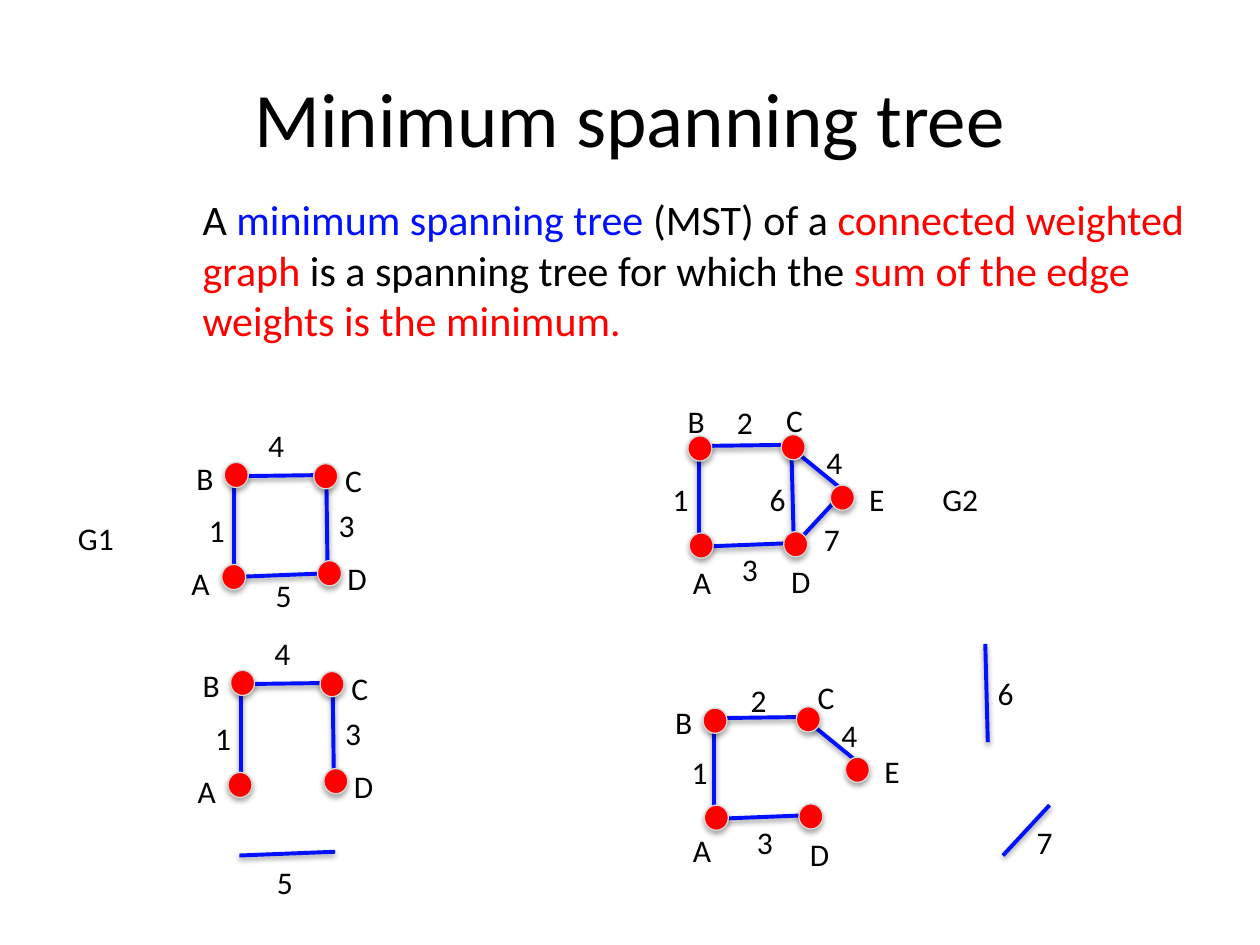
from dataclasses import dataclass, field

import pptx
import pptx.dml.color
import pptx.enum.shapes
import pptx.enum.text
import pptx.oxml
import pptx.oxml.ns
import pptx.util
from pptx.util import Inches

Point = tuple[float, float]


@dataclass(frozen=True)
class Theme:
    font: str = "Calibri"
    text: str = "000000"
    blue: str = "0110FF"
    red: str = "FF0000"
    outline: str = "D8D8D8"
    title_size: int = 44
    body_size: int = 24
    label_size: int = 18
    edge_width: float = 2.25
    outline_width: float = 0.75


@dataclass(frozen=True)
class Node:
    name: str
    corner: Point
    label: Point


@dataclass(frozen=True)
class Edge:
    weight: str
    start: Point
    end: Point
    label: Point


@dataclass(frozen=True)
class Graph:
    nodes: list[Node]
    edges: list[Edge]


@dataclass(frozen=True)
class Placement:
    """Shift of a whole graph, with exceptions for single edges and labels."""
    shift: Point = (0, 0)
    edges: dict[str, Point] = field(default_factory=dict)
    labels: dict[str, Point] = field(default_factory=dict)


THEME = Theme()
NODE_SIZE = (0.19, 0.2)
LABEL_SIZE = (0.34, 0.4)
NAME_SIZE = (0.49, 0.4)

G1 = Graph(
    nodes=[
        Node("A", (1.76, 4.48), (1.42, 4.43)),
        Node("B", (1.78, 3.67), (1.46, 3.59)),
        Node("C", (2.49, 3.68), (2.64, 3.61)),
        Node("D", (2.52, 4.45), (2.66, 4.39)),
    ],
    edges=[
        Edge("4", (2.6, 3.77), (1.84, 3.78), (2.03, 3.33)),
        Edge("1", (1.86, 3.77), (1.86, 4.55), (1.56, 4.01)),
        Edge("3", (2.59, 3.77), (2.6, 4.55), (2.59, 3.97)),
        Edge("5", (2.6, 4.55), (1.84, 4.58), (2.09, 4.52)),
    ],
)
G2 = Graph(
    nodes=[
        Node("A", (5.47, 4.23), (5.4, 4.42)),
        Node("B", (5.46, 3.46), (5.36, 3.14)),
        Node("C", (6.2, 3.45), (6.14, 3.13)),
        Node("D", (6.22, 4.22), (6.18, 4.41)),
        Node("E", (6.59, 3.85), (6.8, 3.76)),
    ],
    edges=[
        Edge("7", (6.69, 3.91), (6.32, 4.31), (6.44, 4.08)),
        Edge("4", (6.26, 3.54), (6.69, 3.89), (6.46, 3.47)),
        Edge("2", (6.3, 3.53), (5.53, 3.54), (5.75, 3.15)),
        Edge("1", (5.55, 3.53), (5.55, 4.31), (5.24, 3.76)),
        Edge("6", (6.28, 3.53), (6.3, 4.31), (6.01, 3.76)),
        Edge("3", (6.3, 4.31), (5.53, 4.34), (5.79, 4.32)),
    ],
)
# The edges left out of each tree are set apart from it.
G1_TREE = Placement((0.05, 1.65), edges={"5": (0.06, 2.21)},
                    labels={"5": (0.01, 2.28)})
G2_TREE = Placement(
    (0.12, 2.16),
    edges={"6": (1.54, 1.58), "7": (1.64, 2.48)},
    labels={"A": (0, 2.13), "B": (-0.1, 2.39), "C": (0.25, 2.2),
            "D": (0.15, 2.17), "1": (0.15, 2.17), "2": (0.11, 2.21),
            "6": (1.81, 1.54), "7": (1.69, 2.4)},
)


def color(value: str):
    return pptx.dml.color.RGBColor.from_string(value)


def moved(point: Point, shift: Point) -> Point:
    return point[0] + shift[0], point[1] + shift[1]


def add_run(paragraph, text: str, *, size: float, fill: str = THEME.text) -> None:
    run = paragraph.add_run()
    run.text = text
    run.font.name = THEME.font
    run.font.size = pptx.util.Pt(size)
    run.font.color.rgb = color(fill)


def add_text_box(slide, corner: Point, size: Point, runs: list[tuple[str, str]],
                 *, font_size: float, wrap: bool = False) -> None:
    """Add one paragraph made of (text, colour) runs."""
    shape = slide.shapes.add_textbox(*map(Inches, corner + size))
    frame = shape.text_frame
    frame.word_wrap = wrap
    frame.auto_size = pptx.enum.text.MSO_AUTO_SIZE.SHAPE_TO_FIT_TEXT
    for text, fill in runs:
        add_run(frame.paragraphs[0], text, size=font_size, fill=fill)


def add_label(slide, text: str, corner: Point, size: Point = LABEL_SIZE) -> None:
    add_text_box(slide, corner, size, [(text, THEME.text)], font_size=THEME.label_size)


def add_shadow(shape, *, distance: int, opacity: int) -> None:
    """Append a downward shadow; call it after the line is set."""
    shape._element.spPr.append(pptx.oxml.parse_xml(
        f'<a:effectLst {pptx.oxml.ns.nsdecls("a")}>'
        f'<a:outerShdw blurRad="40000" dist="{distance}" dir="5400000" rotWithShape="0">'
        f'<a:srgbClr val="000000"><a:alpha val="{opacity * 1000}"/></a:srgbClr>'
        '</a:outerShdw></a:effectLst>'))


def add_edge(slide, start: Point, end: Point) -> None:
    connector = slide.shapes.add_connector(
        pptx.enum.shapes.MSO_CONNECTOR.STRAIGHT, *map(Inches, start + end))
    connector.line.color.rgb = color(THEME.blue)
    connector.line.width = pptx.util.Pt(THEME.edge_width)
    add_shadow(connector, distance=20000, opacity=38)


def add_node(slide, corner: Point) -> None:
    shape = slide.shapes.add_shape(
        pptx.enum.shapes.MSO_SHAPE.OVAL, *map(Inches, corner + NODE_SIZE))
    shape.fill.solid()
    shape.fill.fore_color.rgb = color(THEME.red)
    shape.line.color.rgb = color(THEME.outline)
    shape.line.width = pptx.util.Pt(THEME.outline_width)
    add_shadow(shape, distance=23000, opacity=35)


def draw_graph(slide, graph: Graph, placement: Placement) -> None:
    for edge in graph.edges:
        shift = placement.edges.get(edge.weight, placement.shift)
        add_edge(slide, moved(edge.start, shift), moved(edge.end, shift))
    for node in graph.nodes:
        add_node(slide, moved(node.corner, placement.shift))
    labels = [(node.name, node.label) for node in graph.nodes]
    labels += [(edge.weight, edge.label) for edge in graph.edges]
    for text, corner in labels:
        shift = placement.labels.get(text, placement.shift)
        add_label(slide, text, moved(corner, shift))


def main() -> None:
    presentation = pptx.Presentation()
    presentation.slide_width, presentation.slide_height = Inches(10), Inches(7.5)
    slide = presentation.slides.add_slide(
        presentation.slide_layouts.get_by_name("Title Only"))

    title = slide.shapes.title
    title.left, title.top, title.width, title.height = map(Inches, (0.5, 0.3, 9, 1.25))
    add_run(title.text_frame.paragraphs[0], "Minimum spanning tree", size=THEME.title_size)

    definition = [
        ("A ", THEME.text),
        ("minimum spanning tree ", THEME.blue),
        ("(MST) of a ", THEME.text),
        ("connected weighted graph ", THEME.red),
        ("is a spanning tree for which the ", THEME.text),
        ("sum of the edge weights is the minimum.", THEME.red),
    ]
    add_text_box(slide, (1.51, 1.49), (8.04, 1.72), definition,
                 font_size=THEME.body_size, wrap=True)

    add_label(slide, "G1", (0.52, 4.07), NAME_SIZE)
    add_label(slide, "G2", (7.38, 3.76), NAME_SIZE)
    for graph, tree in ((G1, G1_TREE), (G2, G2_TREE)):
        draw_graph(slide, graph, Placement())
        draw_graph(slide, graph, tree)
    presentation.save("out.pptx")


if __name__ == "__main__":
    main()
